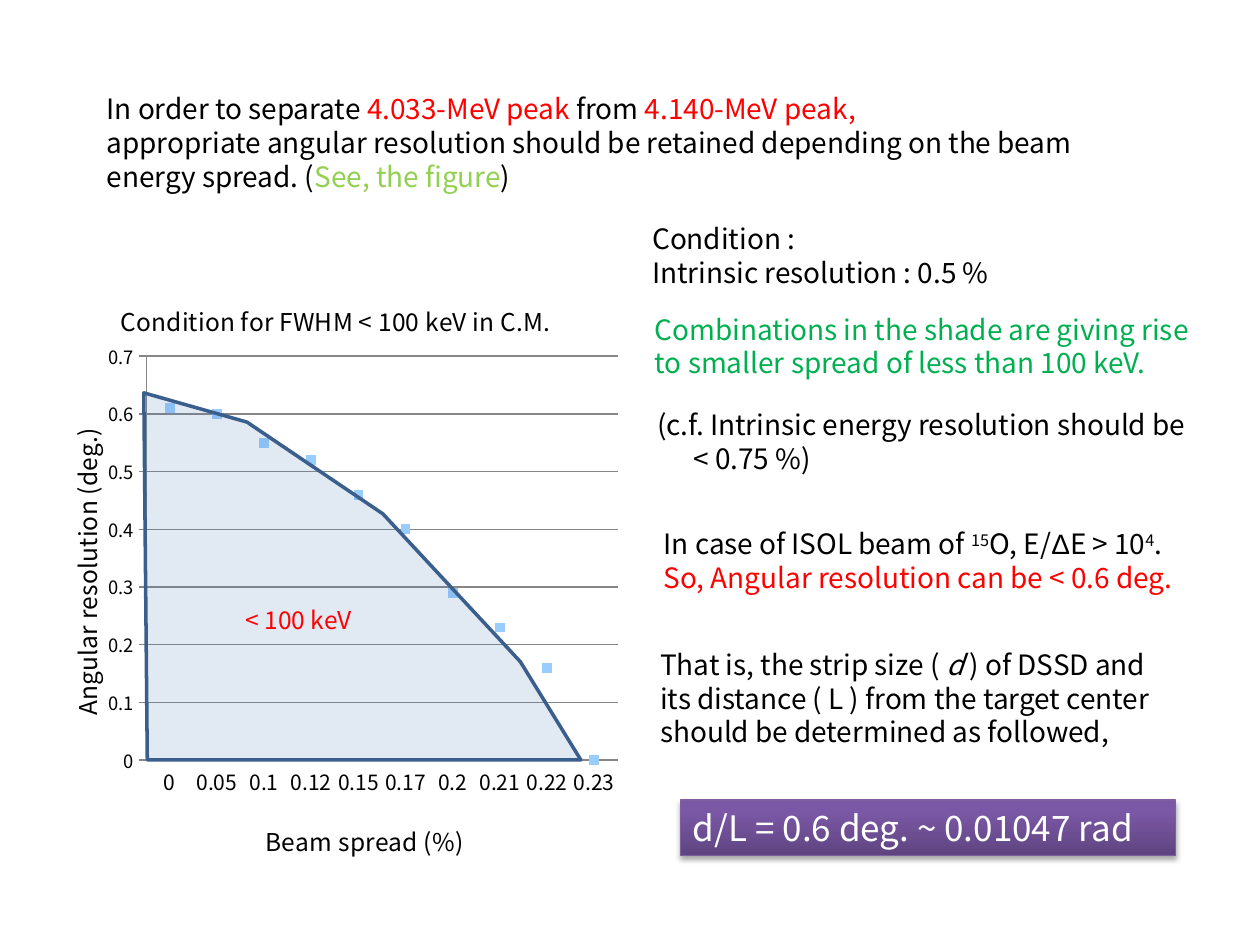
import pptx
import pptx.chart.data
import pptx.dml.color
import pptx.enum.chart
import pptx.enum.shapes
import pptx.enum.text
import pptx.oxml
import pptx.oxml.ns
import pptx.util
import copy

Cm, Pt = pptx.util.Cm, pptx.util.Pt
RGBColor = pptx.dml.color.RGBColor
qn = pptx.oxml.ns.qn

BLACK = RGBColor(0x00, 0x00, 0x00)
WHITE = RGBColor(0xFF, 0xFF, 0xFF)
RED = RGBColor(0xFF, 0x00, 0x00)
LIME = RGBColor(0x92, 0xD0, 0x50)
GREEN = RGBColor(0x00, 0xB0, 0x50)
BLUE = RGBColor(0x4F, 0x81, 0xBD)
NAVY = RGBColor(0x3A, 0x5F, 0x8C)
SKY = RGBColor(0x99, 0xCC, 0xFF)
GREY = RGBColor(0x86, 0x86, 0x86)
PURPLE_LINE = RGBColor(0x7D, 0x60, 0xA0)
PURPLES = [(0, RGBColor(0x5F, 0x44, 0x80)), (0.8, RGBColor(0x7B, 0x58, 0xA6)),
           (1, RGBColor(0x7C, 0x57, 0xA8))]
FONT = "Noto Sans CJK KR"
C_NS = 'xmlns:c="http://schemas.openxmlformats.org/drawingml/2006/chart"'
A_NS = 'xmlns:a="http://schemas.openxmlformats.org/drawingml/2006/main"'


def write(tf, paragraphs, size):
    for i, runs in enumerate(paragraphs):
        p = tf.paragraphs[0] if i == 0 else tf.add_paragraph()
        p.alignment = pptx.enum.text.PP_ALIGN.LEFT
        p.line_spacing = Pt(size * 1.2)
        for text, color, *style in runs:
            r = p.add_run()
            r.text = text
            r.font.size = Pt(size)
            r.font.name = "Arial" if "arial" in style else FONT
            r.font.color.rgb = color
            if "italic" in style:
                r.font.italic = True
            if "super" in style:
                r._r.get_or_add_rPr().set("baseline", "30000")


def place(element, x, y, w=None, h=None):
    values = {"x": x, "y": y, "w": w, "h": h}
    target = '<c:layoutTarget val="inner"/>' if w else ""
    modes = "".join(f'<c:{k}Mode val="edge"/>' for k in "xy")
    sizes = "".join(f'<c:{k} val="{v}"/>' for k, v in values.items() if v is not None)
    for old in element.findall(qn("c:layout")):
        element.remove(old)
    layout = pptx.oxml.parse_xml(
        f"<c:layout {C_NS}><c:manualLayout>{target}{modes}{sizes}</c:manualLayout></c:layout>")
    tx = element.find(qn("c:tx"))
    if tx is None:
        element.insert(0, layout)
    else:
        tx.addnext(layout)


prs = pptx.Presentation()
prs.slide_width, prs.slide_height = Cm(25.4), Cm(19.05)
s = prs.slides.add_slide(prs.slide_layouts[6])

data = pptx.chart.data.CategoryChartData(number_format="General")
data.categories = [0, 0.05, 0.1, 0.12, 0.15, 0.17, 0.2, 0.21, 0.22, 0.23]
data.add_series("Series 1", [0.61, 0.6, 0.55, 0.52, 0.46, 0.4, 0.29, 0.23, 0.16, 0])
chart = s.shapes.add_chart(pptx.enum.chart.XL_CHART_TYPE.LINE_MARKERS,
                           Cm(0.51), Cm(5.33), Cm(12.19), Cm(12.34), data).chart
chart.has_legend = False
chart.font.name = FONT
chart.font.size = Pt(10)
chart.font.color.rgb = BLACK
plot = chart.plots[0]
plot.vary_by_categories = False
place(chart._chartSpace.chart.plotArea, 0.2, 0.15, 0.78, 0.66)

series = plot.series[0]
series.smooth = False
series.format.line.fill.background()
series.marker.style = pptx.enum.chart.XL_MARKER_STYLE.SQUARE
series.marker.size = 5
series.marker.format.fill.solid()
series.marker.format.fill.fore_color.rgb = SKY
series.marker.format.line.color.rgb = SKY

cat_axis, val_axis = chart.category_axis, chart.value_axis
TICK = pptx.enum.chart.XL_TICK_MARK
for axis, size, tick in [(cat_axis, 12, TICK.NONE), (val_axis, 10.5, TICK.CROSS)]:
    axis.tick_labels.font.size = Pt(size)
    axis.tick_labels.font.name = FONT
    axis.tick_labels.font.color.rgb = BLACK
    axis.major_tick_mark = tick
    axis.minor_tick_mark = TICK.NONE
    axis.format.line.color.rgb = GREY
val_axis.minimum_scale, val_axis.maximum_scale, val_axis.major_unit = 0, 0.7, 0.1
val_axis.has_major_gridlines = True
val_axis.major_gridlines.format.line.color.rgb = GREY

chart.has_title = True
for title, text, x, y in [
    (chart.chart_title, "Condition for FWHM < 100 keV in C.M.", 0.15, 0.05),
    (cat_axis.axis_title, "Beam spread (%)", 0.39, 0.9),
    (val_axis.axis_title, "Angular resolution (deg.)", 0.06, 0.26),
]:
    r = title.text_frame.paragraphs[0].add_run()
    r.text = text
    r.font.size = Pt(14)
    r.font.bold = False
    r.font.name = FONT
    r.font.color.rgb = BLACK
    place(title._element, x, y)
val_axis.axis_title.text_frame._txBody.find(qn("a:bodyPr")).set("rot", "-5400000")

outline = [(2.9, 7.92), (2.97, 15.32), (11.71, 15.32), (10.49, 13.34), (7.72, 10.36), (4.98, 8.51)]
points = [(Cm(x), Cm(y)) for x, y in outline]
builder = s.shapes.build_freeform(*points[0])
builder.add_line_segments(points[1:], close=True)
shade = builder.convert_to_shape()
shade.shadow.inherit = False
shade.fill.solid()
shade.fill.fore_color.rgb = BLUE
color = shade._element.spPr.find(qn("a:solidFill"))[0]
color.append(pptx.oxml.parse_xml(f'<a:alpha {A_NS} val="17000"/>'))
shade.line.color.rgb = NAVY
shade.line.width = Pt(2)

texts = [
    (1.9, 1.73, 21.23, 2.31, 16, [
        [("In order to separate ", BLACK), ("4.033-MeV peak ", RED), ("from", BLACK),
         (" 4.140-MeV peak,", RED)],
        [("appropriate angular resolution should be retained depending on the beam", BLACK)],
        [("energy spread. (", BLACK), ("See, the figure", LIME), (")", BLACK)]]),
    (13.06, 12.93, 11.53, 2.31, 16, [
        [("That is, the strip size ( ", BLACK), ("d ", BLACK, "italic"), (") of DSSD and", BLACK)],
        [("its distance ( L ) from the target center", BLACK)],
        [("should be determined as followed,", BLACK)]]),
    (4.7, 12.07, 2.84, 0.86, 14, [[("< 100 keV", RED)]]),
    (12.9, 4.34, 7.62, 1.63, 16, [
        [("Condition :", BLACK)], [("Intrinsic resolution : 0.5 %", BLACK)]]),
    (12.95, 6.17, 11.96, 1.63, 16, [
        [("Combinations in the shade are giving rise", GREEN)],
        [("to smaller spread of less than 100 keV.", GREEN)]]),
    (13, 8.1, 11.79, 1.63, 16, [
        [("(c.f. Intrinsic energy resolution should be", BLACK)], [("< 0.75 %)", BLACK)]]),
    (13.13, 10.49, 11.38, 1.63, 16, [
        [("In case of ISOL beam of ", BLACK), ("15", BLACK, "super"), ("O, E/", BLACK),
         ("Δ", BLACK, "arial"), ("E > 10", BLACK), ("4", BLACK, "super"), (".", BLACK)],
        [("So, Angular resolution can be < 0.6 deg.", RED)]]),
]
for x, y, w, h, size, paragraphs in texts:
    tf = s.shapes.add_textbox(Cm(x), Cm(y), Cm(w), Cm(h)).text_frame
    tf.word_wrap = True
    write(tf, paragraphs, size)
    for p in tf.paragraphs:
        if p.text == "< 0.75 %)":
            p._p.get_or_add_pPr().set("marL", str(Cm(0.73)))

sp = s.shapes.add_shape(pptx.enum.shapes.MSO_SHAPE.RECTANGLE,
                        Cm(13.72), Cm(16.13), Cm(9.98), Cm(1.12))
sp.fill.gradient()
sp.fill.gradient_angle = 90
stops = sp._element.spPr.find(qn("a:gradFill")).find(qn("a:gsLst"))
stops.append(copy.deepcopy(stops[-1]))
for stop, (position, color) in zip(sp.fill.gradient_stops, PURPLES):
    stop.position = position
    stop.color.rgb = color
sp.line.color.rgb = PURPLE_LINE
sp.line.width = Pt(0.75)
sp.shadow.inherit = False
sp._element.spPr.find(qn("a:effectLst")).append(pptx.oxml.parse_xml(
    f'<a:outerShdw {A_NS} blurRad="{Pt(3.1)}" dist="{Pt(1.8)}" dir="5400000" rotWithShape="0">'
    '<a:srgbClr val="000000"><a:alpha val="35000"/></a:srgbClr></a:outerShdw>'))
tf = sp.text_frame
tf.word_wrap = True
tf.vertical_anchor = pptx.enum.text.MSO_ANCHOR.MIDDLE
write(tf, [[("d/L = 0.6 deg. ~ 0.01047 rad", WHITE)]], 20)

prs.save("out.pptx")
